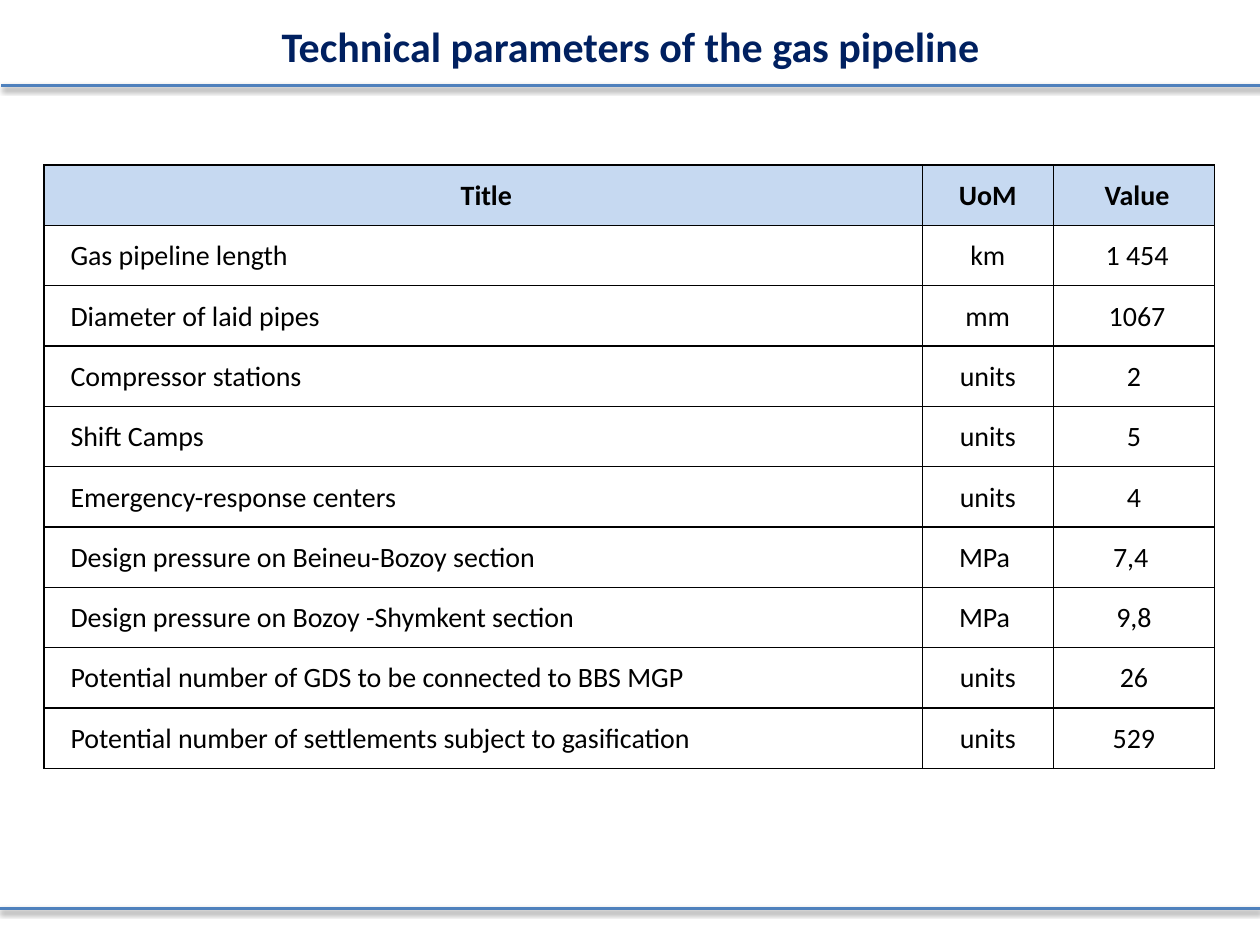
from dataclasses import dataclass
from typing import Any

from lxml.etree import SubElement
from pptx import Presentation
from pptx.dml.color import RGBColor
from pptx.enum.shapes import MSO_CONNECTOR as Connector
from pptx.enum.text import MSO_ANCHOR as Anchor, PP_ALIGN as Align
from pptx.oxml.ns import qn
from pptx.util import Inches, Pt

NAVY, BLUE, PALE_BLUE, BLACK = "002060", "4F81BD", "C6D9F1", "000000"
COLUMN_WIDTHS = (6.97, 1.04, 1.28)
CELL_FORMAT = {
    "margin_left": Inches(0.01),
    "margin_right": Inches(0.01),
    "margin_top": Inches(0.01),
    "margin_bottom": 0,
    "vertical_anchor": Anchor.MIDDLE,
}


@dataclass(frozen=True)
class Parameter:
    title: str
    unit: str
    value: str


@dataclass(frozen=True)
class Rule:
    left: float
    top: float
    width: float = 10


HEADING = Parameter(" Title", "UoM", " Value")
PARAMETERS = [
    Parameter("Gas pipeline length", "km", " 1 454"),
    Parameter("Diameter of laid pipes", "mm", " 1067"),
    Parameter("Compressor stations", "units", "2"),
    Parameter("Shift Camps", "units", "5"),
    Parameter("Emergency-response centers", "units", "4"),
    Parameter("Design pressure on Beineu-Bozoy section", "MPa ", "7,4 "),
    Parameter("Design pressure on Bozoy -Shymkent section", "MPa ", "9,8"),
    Parameter("Potential number of GDS to be connected to BBS MGP", "units", "26"),
    Parameter("Potential number of settlements subject to gasification", "units", "529"),
]
RULES = [Rule(0.01, 0.68), Rule(0, 7.21)]


def color(value: str) -> RGBColor:
    return RGBColor.from_string(value)


def apply(target: Any, values: dict[str, Any]) -> None:
    for name, value in values.items():
        setattr(target, name, value)


def write(frame: Any, text: str, size: float, ink: str, bold: bool, align: Any) -> Any:
    paragraph = frame.paragraphs[0]
    paragraph.alignment = align
    run = paragraph.add_run()
    run.text = text
    apply(run.font, {"name": "Calibri", "size": Pt(size), "bold": bold})
    run.font.color.rgb = color(ink)
    return paragraph


def add_color(parent: Any, value: str) -> Any:
    return SubElement(parent, qn("a:srgbClr"), val=value)


def add_borders(cell: Any) -> None:
    properties = cell._tc.get_or_add_tcPr()
    for side in ("lnL", "lnR", "lnT", "lnB"):
        border = SubElement(properties, qn(f"a:{side}"), w=str(Pt(1)))
        add_color(SubElement(border, qn("a:solidFill")), BLACK)


def fill_cell(cell: Any, text: str, heading: bool, indented: bool) -> None:
    apply(cell, CELL_FORMAT)
    align = Align.LEFT if indented else Align.CENTER
    paragraph = write(cell.text_frame, text, 16, BLACK, heading, align)
    if indented:
        properties = paragraph._p.get_or_add_pPr()
        properties.set("marL", str(Inches(0.2)))
        properties.set("indent", "0")
    add_borders(cell)
    if heading:
        cell.fill.solid()
        cell.fill.fore_color.rgb = color(PALE_BLUE)
    else:
        cell.fill.background()


def draw_rule(slide: Any, rule: Rule) -> None:
    left, top, right = Inches(rule.left), Inches(rule.top), Inches(rule.left + rule.width)
    connector = slide.shapes.add_connector(Connector.STRAIGHT, left, top, right, top)
    connector.line.color.rgb = color(BLUE)
    connector.line.width = Pt(2)
    effects = SubElement(connector._element.spPr, qn("a:effectLst"))
    shadow = SubElement(
        effects, qn("a:outerShdw"), blurRad=str(Pt(3.1)), dist=str(Pt(1.6)),
        dir="5400000", rotWithShape="0",
    )
    SubElement(add_color(shadow, BLACK), qn("a:alpha"), val="38000")


def draw_title(slide: Any) -> None:
    title = slide.shapes.title
    apply(title, {"left": 0, "top": Inches(0.13), "width": Inches(10.01), "height": Inches(0.47)})
    apply(title.text_frame, {"word_wrap": True, "vertical_anchor": Anchor.MIDDLE})
    write(title.text_frame, "Technical parameters of the gas pipeline", 24, NAVY, True, Align.CENTER)


def draw_parameters(slide: Any) -> None:
    records = [HEADING, *PARAMETERS]
    table = slide.shapes.add_table(
        len(records), len(COLUMN_WIDTHS), Inches(0.35), Inches(1.31),
        Inches(sum(COLUMN_WIDTHS)), Inches(4.79),
    ).table
    apply(table, {"first_row": False, "horz_banding": False})
    for column, width in zip(table.columns, COLUMN_WIDTHS):
        column.width = Inches(width)
    for row, record in zip(table.rows, records):
        heading = record is HEADING
        texts = (record.title, record.unit, record.value)
        for position, (cell, text) in enumerate(zip(row.cells, texts)):
            fill_cell(cell, text, heading, indented=position == 0 and not heading)


def main() -> None:
    presentation = Presentation()
    apply(presentation, {"slide_width": Inches(10), "slide_height": Inches(7.5)})
    slide = presentation.slides.add_slide(presentation.slide_layouts[5])
    draw_title(slide)
    draw_parameters(slide)
    for rule in RULES:
        draw_rule(slide, rule)
    presentation.save("out.pptx")


if __name__ == "__main__":
    main()
